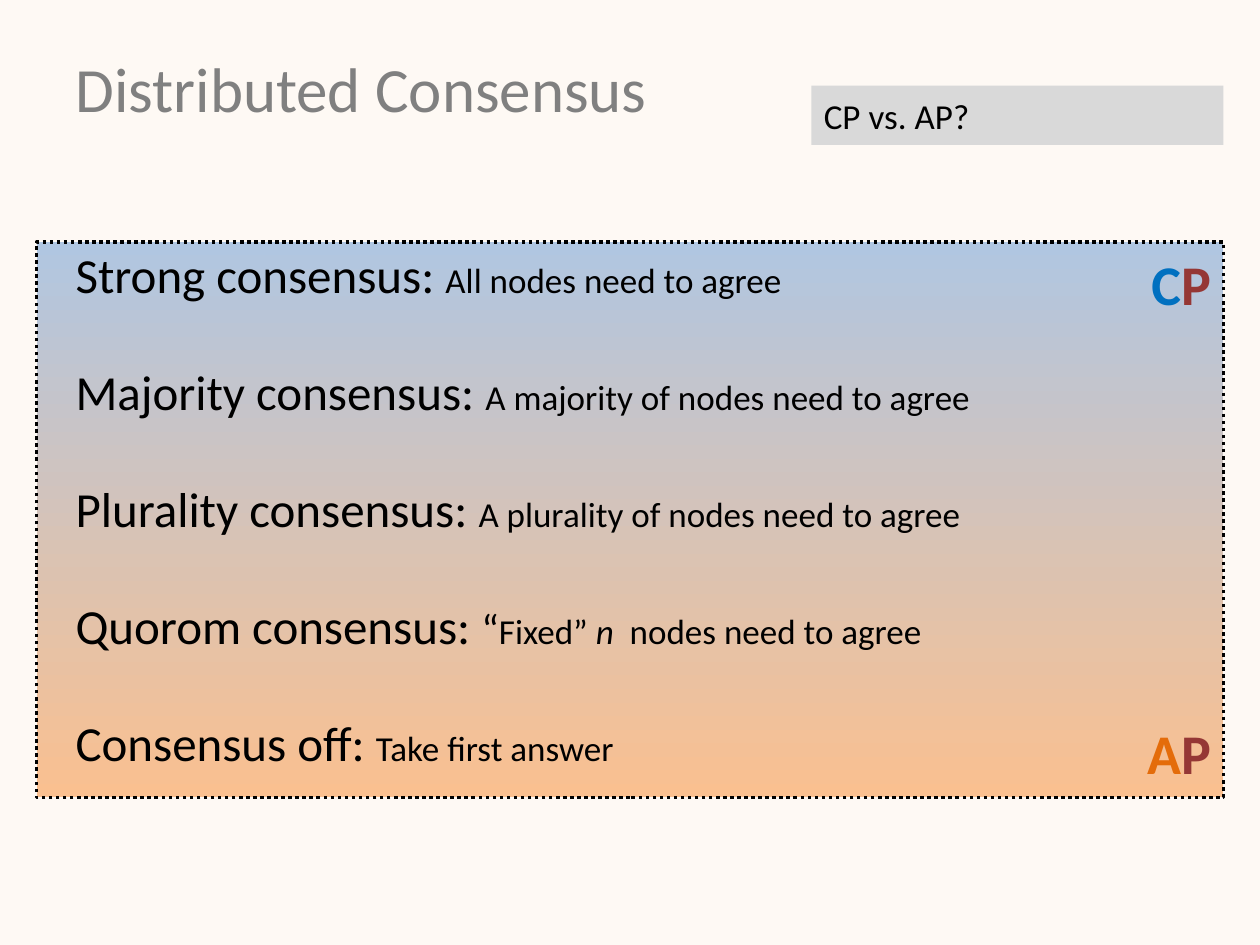
"""Build a slide that ranks consensus levels from CP to AP."""
from lxml.etree import SubElement
from pptx import Presentation
from pptx.dml.color import RGBColor
from pptx.enum.dml import MSO_LINE
from pptx.enum.shapes import MSO_SHAPE
from pptx.enum.text import MSO_ANCHOR, MSO_AUTO_SIZE, PP_ALIGN
from pptx.oxml.ns import qn
from pptx.util import Pt

HUES = {
    "back": "FEF9F4", "text": "000000", "title": "808080", "tag": "D9D9D9",
    "low": "FAC090", "high": "B0C6E1",
    "C": "0070C0", "A": "E46C0A", "P": "953735",
}


def color(name):
    return RGBColor.from_string(HUES[name])


def add_run(para, text, size, hue="text", bold=False, slant=False):
    run = para.add_run()
    run.text = text
    font = run.font
    font.name, font.size = "Calibri", Pt(size)
    font.bold, font.italic = bold, slant
    font.color.rgb = color(hue)


deck = Presentation()
deck.slide_width, deck.slide_height = Pt(720), Pt(540)
slide = deck.slides.add_slide(deck.slide_layouts[1])
slide.background.fill.solid()
slide.background.fill.fore_color.rgb = color("back")
shapes = slide.shapes
title, body = shapes.title, slide.placeholders[1]

panel = shapes.add_shape(MSO_SHAPE.RECTANGLE, Pt(20.9), Pt(138.2), Pt(678.2), Pt(317.5))
shapes._spTree.insert(2, panel._element)
panel.shadow.inherit = False
panel.fill.gradient()
panel.fill.gradient_angle = 90
for stop, name in zip(panel.fill.gradient_stops, ("low", "high")):
    stop.color.rgb = color(name)
    stop.position = 0 if name == "low" else 1
panel.line.color.rgb = color("text")
panel.line.width = Pt(2)
panel.line.dash_style = MSO_LINE.ROUND_DOT
frame = panel.text_frame
frame.vertical_anchor = MSO_ANCHOR.TOP
frame.margin_top = Pt(4.4)
for para, word in zip((frame.paragraphs[0], frame.add_paragraph()), ("CP", "AP")):
    para.alignment = PP_ALIGN.RIGHT
    para.space_after = Pt(229.5 if word == "CP" else 0)
    for char in word:
        add_run(para, char, 32, char, bold=True)

title.left, title.top, title.width, title.height = Pt(36), Pt(21.6), Pt(648), Pt(56.2)
title.text_frame.vertical_anchor = MSO_ANCHOR.MIDDLE
title.text_frame.auto_size = MSO_AUTO_SIZE.NONE
head = title.text_frame.paragraphs[0]
head.alignment = PP_ALIGN.LEFT
add_run(head, "Distributed Consensus", 36, "title")

levels = [
    ("Strong consensus: ", [("All nodes need to agree", 20, False)]),
    ("Majority consensus: ", [("A majority of nodes need to agree", 20, False)]),
    ("Plurality consensus: ", [("A plurality of nodes need to agree", 20, False)]),
    ("Quorom consensus: ", [("“", 24, False), ("Fixed” ", 20, False),
                            ("n  ", 20, True), ("nodes need to agree", 20, False)]),
    ("Consensus off: ", [("Take first answer", 20, False)]),
]
body.left, body.top, body.width, body.height = Pt(36), Pt(136), Pt(648), Pt(346.4)
frame = body.text_frame
frame.auto_size = MSO_AUTO_SIZE.NONE
for row, (label, parts) in enumerate(levels):
    para = frame.add_paragraph() if row else frame.paragraphs[0]
    para.space_before, para.space_after = Pt(0), Pt(33.2)
    props = para._p.get_or_add_pPr()
    props.set("marL", "0")
    props.set("indent", "0")
    SubElement(props, qn("a:buNone"))
    add_run(para, label, 28)
    for text, size, slant in parts:
        add_run(para, text, size, slant=slant)

tag = shapes.add_shape(MSO_SHAPE.RECTANGLE, Pt(463.7), Pt(49), Pt(235.4), Pt(33.8))
tag.shadow.inherit = False
tag.fill.solid()
tag.fill.fore_color.rgb = color("tag")
tint = tag._element.spPr.find(qn("a:solidFill"))[0]
SubElement(tint, qn("a:alpha")).set("val", "98000")
tag.line.fill.background()
note = tag.text_frame.paragraphs[0]
note.alignment = PP_ALIGN.LEFT
add_run(note, "CP vs. AP?", 20)

deck.save("out.pptx")
